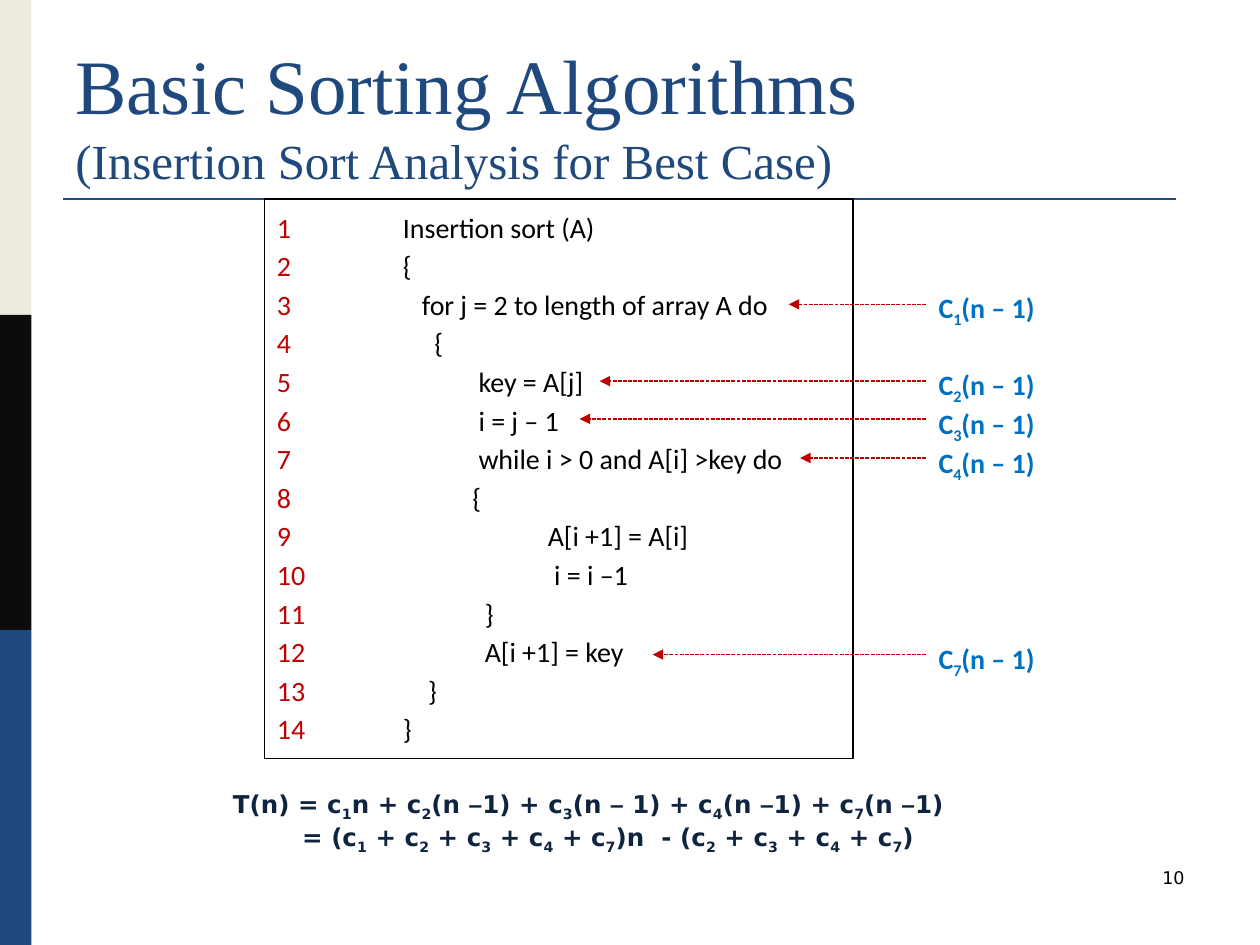
from lxml import etree
from pptx import Presentation
from pptx import util as u
from pptx.dml.color import RGBColor
from pptx.enum import dml, shapes, text
from pptx.oxml.ns import qn

NAVY, RED, BLUE, BLACK = "1F497D", "C00000", "0070C0", "000000"


def color(hex_code):
    return RGBColor.from_string(hex_code)


def add_span(para, words, hex_code, base=None, **formats):
    """Add one run; base is the sub/superscript shift in 1/1000 percent."""
    span = para.add_run()
    span.text = words
    span.font.color.rgb = color(hex_code)
    for name, value in formats.items():
        setattr(span.font, name, value)
    if base:
        span.font._element.set("baseline", str(base))


def add_math(para, words, hex_code, dash_font, **formats):
    """Add text in which the character after "_" is a subscript."""
    for index, piece in enumerate(words.split("_")):
        if index:
            add_span(para, piece[0], hex_code, base=-25000, **formats)
            piece = piece[1:]
        for part in piece.replace("–", "|–|").split("|"):
            if part:
                face = dash_font if part == "–" else formats["name"]
                add_span(para, part, hex_code, **{**formats, "name": face})


deck = Presentation()
deck.slide_width, deck.slide_height = u.Inches(10), u.Inches(7.5)
page = deck.slides.add_slide(deck.slide_layouts[6])

# Side bands
for row, fill in enumerate(["EEECE1", "0C0C0C", NAVY]):
    band = page.shapes.add_shape(shapes.MSO_SHAPE.RECTANGLE, 0, u.Inches(2.5 * row),
                                 u.Inches(0.25), u.Inches(2.5))
    band.shadow.inherit = False
    band.fill.solid()
    band.fill.fore_color.rgb = color(fill)
    band.line.fill.background()

# Rule under the title
rule = page.shapes.add_connector(shapes.MSO_CONNECTOR.STRAIGHT, u.Inches(0.5),
                                 u.Inches(1.58), u.Inches(9.33), u.Inches(1.58))
rule.line.color.rgb = color(NAVY)
rule.line.width = u.Pt(1.5)
etree.SubElement(rule._element.spPr, qn("a:effectLst"))

# Title
title = page.shapes.add_textbox(u.Inches(0.5), u.Inches(0.3), u.Inches(9), u.Inches(1.25))
title.text_frame.word_wrap = True
title.text_frame.vertical_anchor = text.MSO_ANCHOR.BOTTOM
para = title.text_frame.paragraphs[0]
add_span(para, "Basic Sorting Algorithms", NAVY, name="Times New Roman", size=u.Pt(44))
para.add_line_break()
add_span(para, "(Insertion Sort Analysis for Best Case)", NAVY,
         name="Times New Roman", size=u.Pt(28))

# Page number
number = page.shapes.add_textbox(u.Inches(7.17), u.Inches(6.83), u.Inches(2.33), u.Inches(0.5))
number.text_frame.word_wrap = True
para = number.text_frame.paragraphs[0]
para.alignment = text.PP_ALIGN.RIGHT
add_span(para, "10", BLACK, name="DejaVu Sans", size=u.Pt(10))

# Pseudocode: tab position in inches, code
code_lines = [
    (1, "Insertion sort (A)"),
    (1, "{"),
    (1.15, "for j = 2 to length of array A do"),
    (1.25, "{"),
    (1.6, "key = A[j]"),
    (1.6, "i = j – 1"),
    (1.6, "while i > 0 and A[i] >key do"),
    (1.55, "{"),
    (2.15, "A[i +1] = A[i]"),
    (2.2, "i = i –1"),
    (1.65, "}"),
    (1.65, "A[i +1] = key"),
    (1.2, "}"),
    (1, "}"),
]
code = page.shapes.add_shape(shapes.MSO_SHAPE.RECTANGLE, u.Inches(2.1), u.Inches(1.58),
                             u.Inches(4.67), u.Inches(4.44))
code.shadow.inherit = False
code.fill.solid()
code.fill.fore_color.rgb = color("FFFFFF")
code.line.color.rgb = color(BLACK)
code.line.width = u.Pt(0.75)
frame = code.text_frame
frame.word_wrap = True
frame.vertical_anchor = text.MSO_ANCHOR.TOP
frame.auto_size = text.MSO_AUTO_SIZE.SHAPE_TO_FIT_TEXT
for line_number, (tab, words) in enumerate(code_lines, 1):
    para = frame.paragraphs[0] if line_number == 1 else frame.add_paragraph()
    para.alignment = text.PP_ALIGN.LEFT
    para.line_spacing = 1.15
    tabs = etree.SubElement(para._p.get_or_add_pPr(), qn("a:tabLst"))
    etree.SubElement(tabs, qn("a:tab"), pos=str(u.Inches(tab)), algn="l")
    add_span(para, f"{line_number}\t", RED, name="Calibri", size=u.Pt(16))
    add_span(para, words, BLACK, name="Calibri", size=u.Pt(16))

# Cost labels with arrows: index, top, height, arrow tip
costs = [(1, 2.21, 0.41, 6.26), (2, 2.82, 0.41, 4.76), (3, 3.13, 0.39, 4.6),
         (4, 3.44, 0.39, 6.35), (7, 5, 0.39, 5.18)]
for index, top, height, tip in costs:
    label = page.shapes.add_textbox(u.Inches(7.35), u.Inches(top),
                                    u.Inches(0.99), u.Inches(height))
    label.text_frame.word_wrap = False
    label.text_frame.auto_size = text.MSO_AUTO_SIZE.SHAPE_TO_FIT_TEXT
    para = label.text_frame.paragraphs[0]
    para.line_spacing = 1.15
    para.space_after = u.Pt(10)
    add_math(para, f"C_{index}(n – 1)", BLUE, "Calibri",
             name="Calibri", size=u.Pt(16), bold=True)

    middle = u.Inches(top + height / 2)
    arrow = page.shapes.add_connector(shapes.MSO_CONNECTOR.STRAIGHT, u.Inches(7.35), middle,
                                      u.Inches(tip), middle)
    arrow.begin_connect(label, 1)
    arrow.line.color.rgb = color(RED)
    arrow.line.width = u.Pt(0.75)
    arrow.line.dash_style = dml.MSO_LINE.SQUARE_DOT
    etree.SubElement(arrow.line._get_or_add_ln(), qn("a:tailEnd"), type="triangle")
    etree.SubElement(arrow._element.spPr, qn("a:effectLst"))

# Total running time: left indent in inches, formula
formulas = [
    (0, "T(n) = c_1n + c_2(n –1) + c_3(n – 1) + c_4(n –1) + c_7(n –1)"),
    (0.55, "= (c_1 + c_2 + c_3 + c_4 + c_7)n  - (c_2 + c_3 + c_4 + c_7)"),
]
total = page.shapes.add_textbox(u.Inches(1.75), u.Inches(6.21), u.Inches(7.08), u.Inches(0.57))
frame = total.text_frame
frame.word_wrap = True
frame.auto_size = text.MSO_AUTO_SIZE.SHAPE_TO_FIT_TEXT
for row, (indent, words) in enumerate(formulas):
    para = frame.add_paragraph() if row else frame.paragraphs[0]
    para._p.get_or_add_pPr().set("marL", str(u.Inches(indent)))
    add_math(para, words, "0F243E", "Arial", name="DejaVu Sans", size=u.Pt(14), bold=True)

deck.save("out.pptx")
